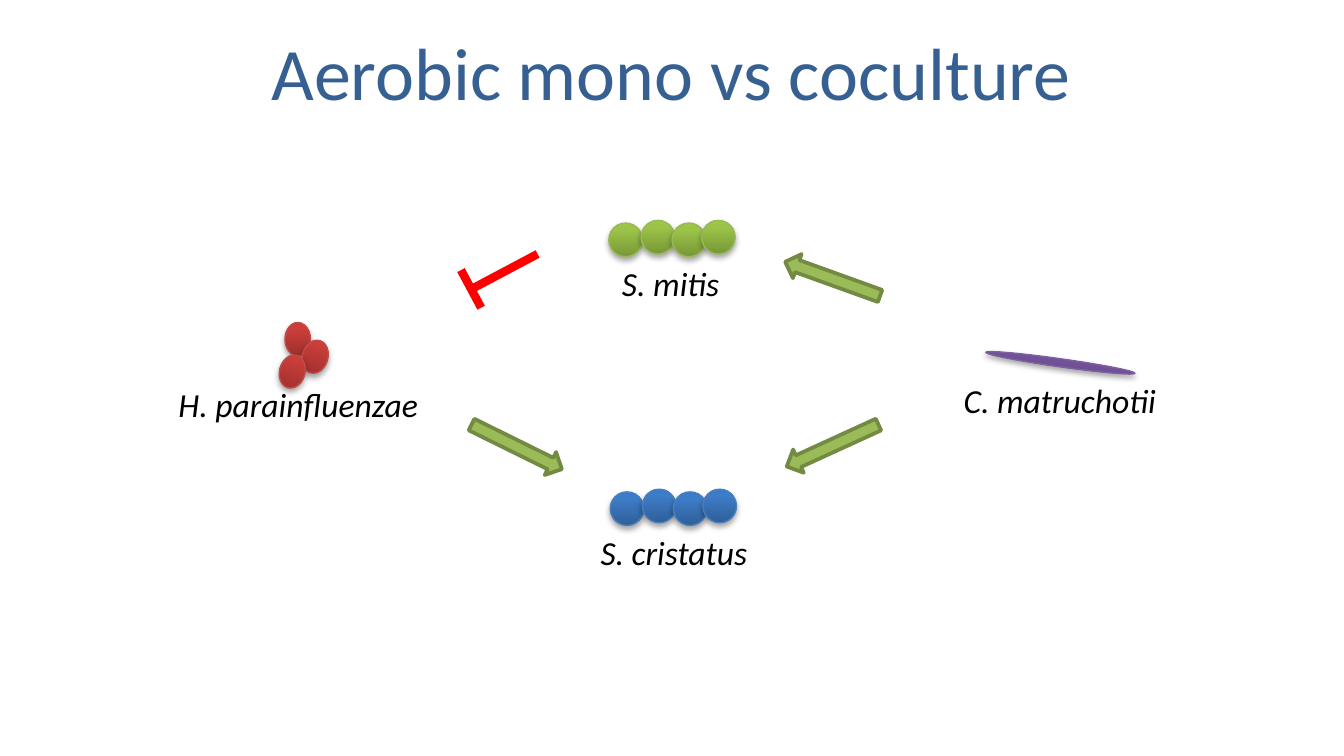
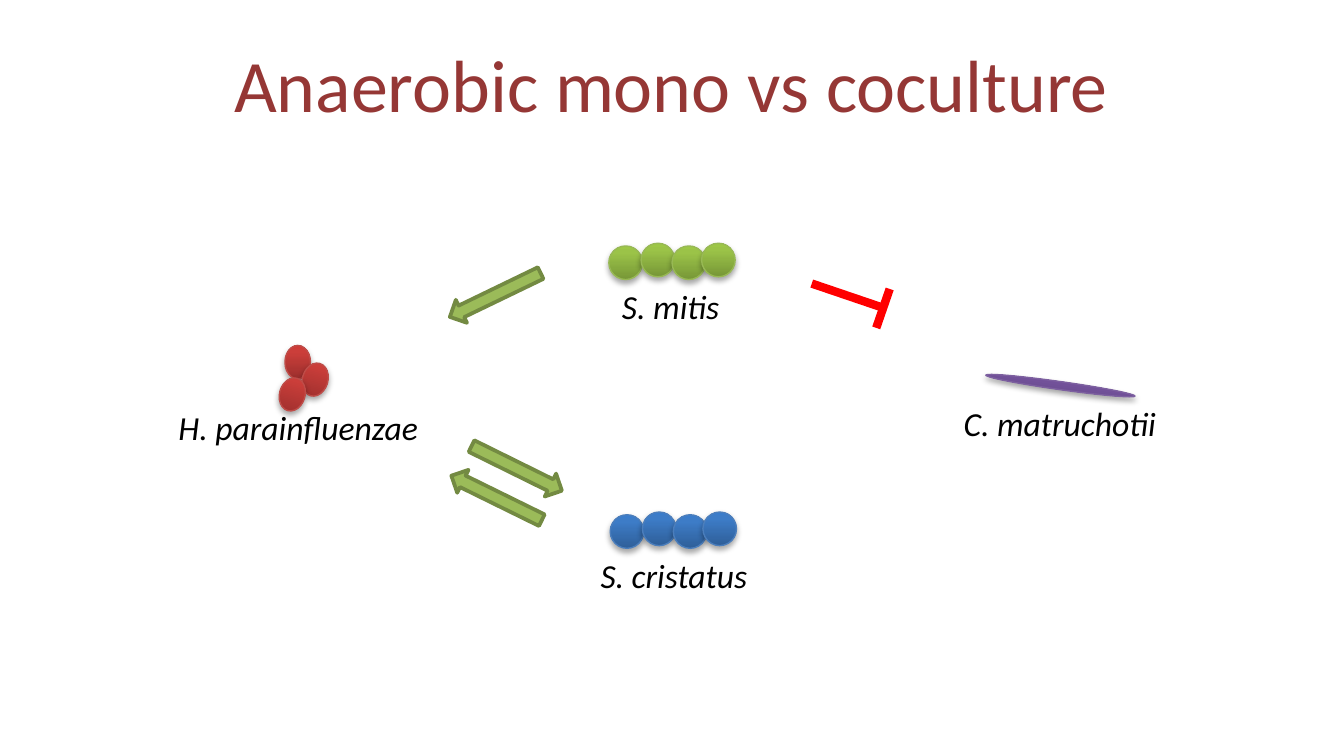
"""Two slides on how four oral bacteria affect each other with and without air."""
from copy import deepcopy

from lxml import etree
from pptx import Presentation
from pptx.dml.color import RGBColor
from pptx.enum import shapes, text
from pptx.oxml.ns import qn
from pptx.util import Inches, Pt

FONT = "Calibri"
COLORS = {
    "aerobic": "376092", "anaerobic": "953735", "label": "000000",
    "arrow": "9BBB59", "arrow_edge": "738A42", "inhibit": "FF0000", "shadow": "000000",
    "green": ("779737", "9BC348", "9DC746"), "green_edge": "98B955",
    "blue": ("2F5F99", "3D7CC7", "3A7CCB"), "blue_edge": "4B7EBC",
    "purple": ("5F4480", "7B58A6", "7C57A8"), "purple_edge": "7D60A0",
    "red": ("9C2F2D", "CB3E3A", "CE3B37"), "red_edge": "BF4C48",
}
STOPS = (0, 0.8, 1)

CHAIN = [(0, 0.02), (0.24, 0), (0.47, 0.02), (0.69, 0)]
BEAD = 0.25
CHAINS = [
    ("S. mitis", "green", 4.53, 1.64, (4.53, 0.93)),
    ("S. cristatus", "blue", 4.54, 3.64, (4.37, 1.3)),
]
LABEL_DROP, LABEL_HEIGHT = 0.27, 0.4
CELLS = [
    ("C. matruchotii", "purple", [(7.33, 2.67, 1.12, 0.06, 8)], (7.06, 2.78, 1.65)),
    ("H. parainfluenzae", "red",
     [(2.12, 2.4, 0.19, 0.25, 0), (2.25, 2.53, 0.19, 0.25, 15.8),
      (2.08, 2.64, 0.19, 0.25, 15.8)], (1.22, 2.81, 2)),
]
ARROW_SIZE = (0.75, 0.19)

SLIDES = [
    {"title": "Aerobic mono vs coculture", "color": "aerobic", "title_top": 0.06, "drop": 0,
     "arrows": [(5.82, 1.98, 199.8), (5.82, 3.22, 155.4), (3.47, 3.23, 26.3)],
     "inhibition": [(3.51, 2.15, 4, 1.89), (3.43, 2.01, 3.58, 2.29)]},
    {"title": "Anaerobic mono vs coculture", "color": "anaerobic", "title_top": 0.15,
     "drop": 0.17,
     "arrows": [(3.47, 3.39, 26.3), (3.32, 3.61, 206.2), (3.31, 2.1, 154.2)],
     "inhibition": [(6.57, 2.29, 6.04, 2.11), (6.52, 2.44, 6.62, 2.15)]},
]


def rgb(name):
    return RGBColor.from_string(COLORS[name])


def box(*lengths):
    return [Inches(v) for v in lengths]


def style_run(p, size, color, italic=None):
    font = p.runs[0].font
    font.name, font.size, font.italic = FONT, Pt(size), italic
    font.color.rgb = rgb(color)


def add_shape(parent, kind, bounds, rotation, edge, width):
    s = parent.add_shape(kind, *box(*bounds))
    s.rotation = rotation
    s.shadow.inherit = False
    s.line.color.rgb = rgb(edge)
    s.line.width = Pt(width)
    return s


def add_cell(parent, bounds, rotation, color):
    s = add_shape(parent, shapes.MSO_SHAPE.OVAL, bounds, rotation, color + "_edge", 0.75)
    s.fill.gradient()
    s.fill.gradient_angle = 90
    spPr = s._element.spPr
    stops = spPr.find(".//" + qn("a:gsLst"))
    stops.append(deepcopy(stops[-1]))
    for stop, position, value in zip(s.fill.gradient_stops, STOPS, COLORS[color]):
        stop.position = position
        stop.color.rgb = RGBColor.from_string(value)
    shadow = etree.SubElement(
        spPr.find(qn("a:effectLst")), qn("a:outerShdw"), blurRad=str(Pt(3.1)),
        dist=str(Pt(1.8)), dir="5400000", rotWithShape="0")
    tint = etree.SubElement(shadow, qn("a:srgbClr"), val=COLORS["shadow"])
    etree.SubElement(tint, qn("a:alpha"), val="35000")


def add_label(parent, name, left, top, width, align):
    tf = parent.add_textbox(*box(left, top, width, LABEL_HEIGHT)).text_frame
    tf.word_wrap = False
    tf.auto_size = text.MSO_AUTO_SIZE.SHAPE_TO_FIT_TEXT
    tf.text = name
    p = tf.paragraphs[0]
    p.alignment = align
    style_run(p, 18, "label", True)


def add_organisms(parent, drop):
    for name, color, left, top, (label_left, label_width) in CHAINS:
        group = parent.add_group_shape().shapes
        for dx, dy in CHAIN:
            add_cell(group, (left + dx, top + dy + drop, BEAD, BEAD), 0, color)
        add_label(group, name, label_left, top + LABEL_DROP + drop, label_width,
                  text.PP_ALIGN.LEFT)
    for name, color, cells, (left, top, width) in CELLS:
        for x, y, w, h, rotation in cells:
            add_cell(parent, (x, y + drop, w, h), rotation, color)
        add_label(parent, name, left, top + drop, width, text.PP_ALIGN.CENTER)


def add_arrow(parent, left, top, rotation):
    s = add_shape(parent, shapes.MSO_SHAPE.RIGHT_ARROW, (left, top, *ARROW_SIZE),
                  rotation, "arrow_edge", 2)
    s.fill.solid()
    s.fill.fore_color.rgb = rgb("arrow")


def add_inhibition(parent, lines):
    group = parent.add_group_shape().shapes
    for ends in lines:
        line = group.add_connector(shapes.MSO_CONNECTOR.STRAIGHT, *box(*ends))
        line.line.color.rgb = rgb("inhibit")
        line.line.width = Pt(4.5)
        etree.SubElement(line._element.spPr, qn("a:effectLst"))


def add_title(slide, title, color, top):
    s = slide.shapes.title
    s.left, s.top, s.width, s.height = box(1.62, top, 6.75, 0.94)
    tf = s.text_frame
    tf.text = title
    tf.vertical_anchor = text.MSO_ANCHOR.MIDDLE
    p = tf.paragraphs[0]
    p.alignment = text.PP_ALIGN.CENTER
    style_run(p, 39.6, color)


def main():
    prs = Presentation()
    prs.slide_width = Inches(10)
    prs.slide_height = prs.slide_width * 9 // 16
    for content in SLIDES:
        slide = prs.slides.add_slide(prs.slide_layouts[5])
        add_title(slide, content["title"], content["color"], content["title_top"])
        add_organisms(slide.shapes, content["drop"])
        for arrow in content["arrows"]:
            add_arrow(slide.shapes, *arrow)
        add_inhibition(slide.shapes, content["inhibition"])
    prs.save("out.pptx")


if __name__ == "__main__":
    main()
